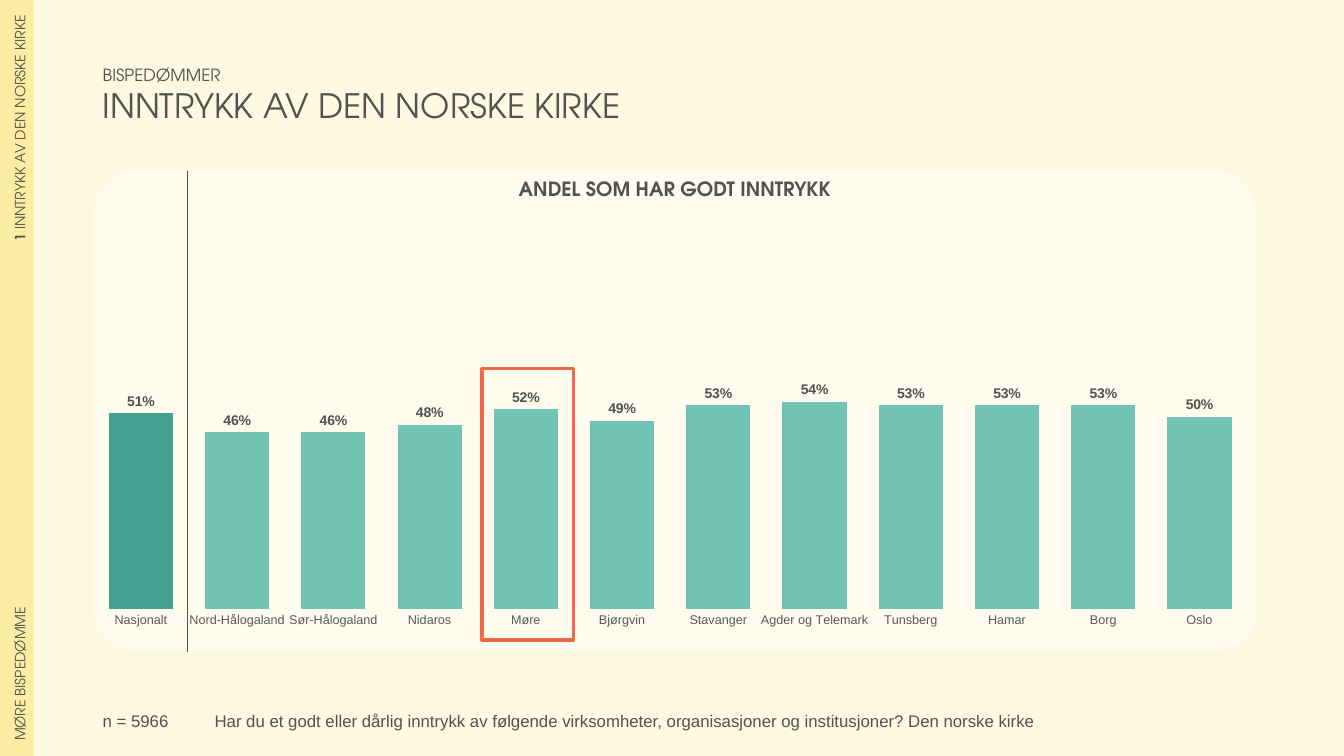
from dataclasses import dataclass

from lxml import etree
from pptx import Presentation
from pptx.chart.data import CategoryChartData
from pptx.dml.color import RGBColor
from pptx.enum.chart import XL_CHART_TYPE, XL_LABEL_POSITION, XL_TICK_MARK
from pptx.enum.shapes import MSO_CONNECTOR, MSO_SHAPE
from pptx.enum.text import MSO_ANCHOR, PP_ALIGN
from pptx.oxml import parse_xml
from pptx.oxml.ns import nsdecls, qn
from pptx.util import Inches, Pt

COLUMNS = XL_CHART_TYPE.COLUMN_CLUSTERED
OUTSIDE_END = XL_LABEL_POSITION.OUTSIDE_END
NO_TICK = XL_TICK_MARK.NONE
STRAIGHT = MSO_CONNECTOR.STRAIGHT
RECT, ROUNDED = MSO_SHAPE.RECTANGLE, MSO_SHAPE.ROUNDED_RECTANGLE
LEFT, CENTER, RIGHT = PP_ALIGN.LEFT, PP_ALIGN.CENTER, PP_ALIGN.RIGHT
MIDDLE = MSO_ANCHOR.MIDDLE
PLAIN_TABLE = "{2D5ABB26-0587-4C30-8999-92F81FD0307C}"


@dataclass(frozen=True)
class Theme:
    background: str = "FEF9E0"
    sidebar: str = "FDEDA2"
    panel: str = "FFFFFF"
    text: str = "515350"
    axis: str = "595959"
    bar: str = "71C3B3"
    national: str = "45A290"
    highlight: str = "F26649"
    heading_font: str = "TeX Gyre Adventor"
    body_font: str = "Arial"
    axis_size: int = 9
    small: int = 10
    body: int = 12
    subtitle: int = 14
    title: int = 24


THEME = Theme()
SHARES = {
    "Nasjonalt": 0.51,
    "Nord-Hålogaland": 0.46,
    "Sør-Hålogaland": 0.46,
    "Nidaros": 0.48,
    "Møre": 0.52,
    "Bjørgvin": 0.49,
    "Stavanger": 0.53,
    "Agder og Telemark": 0.54,
    "Tunsberg": 0.53,
    "Hamar": 0.53,
    "Borg": 0.53,
    "Oslo": 0.50,
}


def rgb(color):
    return RGBColor.from_string(color)


def box(*lengths):
    return [Inches(v) for v in lengths]


def style_font(font, name, size, color=THEME.text, bold=False):
    font.name = name
    font.size = Pt(size)
    font.bold = bold
    font.color.rgb = rgb(color)


def add_run(p, text, font, size, bold=False):
    r = p.add_run()
    r.text = text
    style_font(r.font, font, size, bold=bold)


def add_text(s, at, runs, align=LEFT):
    tf = s.shapes.add_textbox(*box(*at)).text_frame
    tf.word_wrap = True
    p = tf.paragraphs[0]
    p.alignment = align
    for i, run in enumerate(runs):
        if i:
            p.add_line_break()
        add_run(p, *run)


def add_panel(s, at):
    sp = s.shapes.add_shape(ROUNDED, *box(*at))
    sp.shadow.inherit = False
    sp.adjustments[0] = 0.084
    sp.fill.solid()
    sp.fill.fore_color.rgb = rgb(THEME.panel)
    sp.line.fill.background()
    color = sp.fill._xPr.find(".//" + qn("a:srgbClr"))
    etree.SubElement(color, qn("a:alpha")).set("val", "50000")


def add_frame(s, at):
    sp = s.shapes.add_shape(RECT, *box(*at))
    sp.shadow.inherit = False
    sp.fill.background()
    sp.line.color.rgb = rgb(THEME.highlight)
    sp.line.width = Pt(2.25)


def add_divider(s, x, top, bottom):
    line = s.shapes.add_connector(STRAIGHT, *box(x, top, x, bottom))
    line.line.color.rgb = rgb(THEME.text)
    line.line.width = Pt(0.5)
    etree.SubElement(line._element.spPr, qn("a:effectLst"))


def set_plot_layout(chart, x, y, w, h):
    area = chart._chartSpace.chart.plotArea
    for old in area.findall(qn("c:layout")):
        area.remove(old)
    sizes = "".join(f'<c:{k} val="{v}"/>' for k, v in zip("xywh", (x, y, w, h)))
    area.insert(0, parse_xml(
        f'<c:layout {nsdecls("c")}><c:manualLayout><c:layoutTarget val="inner"/>'
        f'<c:xMode val="edge"/><c:yMode val="edge"/>{sizes}'
        '</c:manualLayout></c:layout>'))


def add_share_chart(s, at):
    data = CategoryChartData(number_format="0%")
    data.categories = list(SHARES)
    data.add_series("Series 1", list(SHARES.values()))
    chart = s.shapes.add_chart(COLUMNS, *box(*at), data).chart
    style_font(chart.font, THEME.heading_font, THEME.small)
    chart.has_legend = False
    chart.has_title = False
    set_plot_layout(chart, 0, 0.11, 0.99, 0.8)

    values = chart.value_axis
    values.minimum_scale, values.maximum_scale = 0, 1
    values.has_major_gridlines = False
    values.visible = False
    cats = chart.category_axis
    cats.major_tick_mark = NO_TICK
    cats.format.line.fill.background()
    style_font(cats.tick_labels.font, THEME.body_font, THEME.axis_size, THEME.axis)

    plot = chart.plots[0]
    plot.gap_width = 50
    plot.vary_by_categories = False
    series = plot.series[0]
    for part, color in ((series, THEME.bar), (series.points[0], THEME.national)):
        part.format.fill.solid()
        part.format.fill.fore_color.rgb = rgb(color)
    labels = series.data_labels
    labels.show_value = True
    labels.number_format = "0%"
    labels.number_format_is_linked = False
    labels.position = OUTSIDE_END
    style_font(labels.font, THEME.body_font, THEME.small, bold=True)


def add_sidebar(s, at, entries):
    table = s.shapes.add_table(len(entries), 1, *box(*at)).table
    table.first_row = table.horz_banding = False
    table._tbl.tblPr.find(qn("a:tableStyleId")).text = PLAIN_TABLE
    for row, (align, runs) in enumerate(entries):
        cell = table.cell(row, 0)
        cell.fill.solid()
        cell.fill.fore_color.rgb = rgb(THEME.sidebar)
        cell.vertical_anchor = MIDDLE
        cell.margin_left = cell.margin_right = Inches(0.15)
        cell.margin_top = cell.margin_bottom = Inches(0.15)
        cell._tc.get_or_add_tcPr().set("vert", "vert270")
        p = cell.text_frame.paragraphs[0]
        p.alignment = align
        for text, bold in runs:
            add_run(p, text, THEME.heading_font, THEME.small, bold)


def main():
    prs = Presentation()
    prs.slide_width, prs.slide_height = box(13.33, 7.5)
    s = prs.slides.add_slide(prs.slide_layouts[6])
    s.background.fill.solid()
    s.background.fill.fore_color.rgb = rgb(THEME.background)

    add_panel(s, (0.93, 1.7, 11.53, 4.76))
    add_share_chart(s, (0.92, 1.71, 11.57, 4.76))
    add_sidebar(s, (0, 0, 0.34, 7.5), [
        (RIGHT, [("1", True), (" INNTRYKK AV DEN NORSKE KIRKE", False)]),
        (LEFT, [("MØRE BISPEDØMME", False)]),
    ])
    add_text(s, (0.92, 0.59, 6.67, 0.71), [
        ("BISPEDØMMER", THEME.heading_font, THEME.body),
        ("INNTRYKK AV DEN NORSKE KIRKE", THEME.heading_font, THEME.title),
    ])
    question = ("Har du et godt eller dårlig inntrykk av følgende virksomheter, "
                "organisasjoner og institusjoner? Den norske kirke")
    add_text(s, (2.03, 7, 10.39, 0.27), [(question, THEME.body_font, THEME.body)])
    add_text(s, (0.92, 7, 1.43, 0.27), [("n = 5966", THEME.body_font, THEME.body)])
    add_text(s, (0.93, 1.71, 11.53, 0.34), [
        ("ANDEL SOM HAR GODT INNTRYKK", THEME.heading_font, THEME.subtitle, True),
    ], CENTER)
    add_divider(s, 1.86, 1.7, 6.47)
    add_frame(s, (4.78, 3.66, 0.91, 2.69))
    prs.save("out.pptx")


if __name__ == "__main__":
    main()
